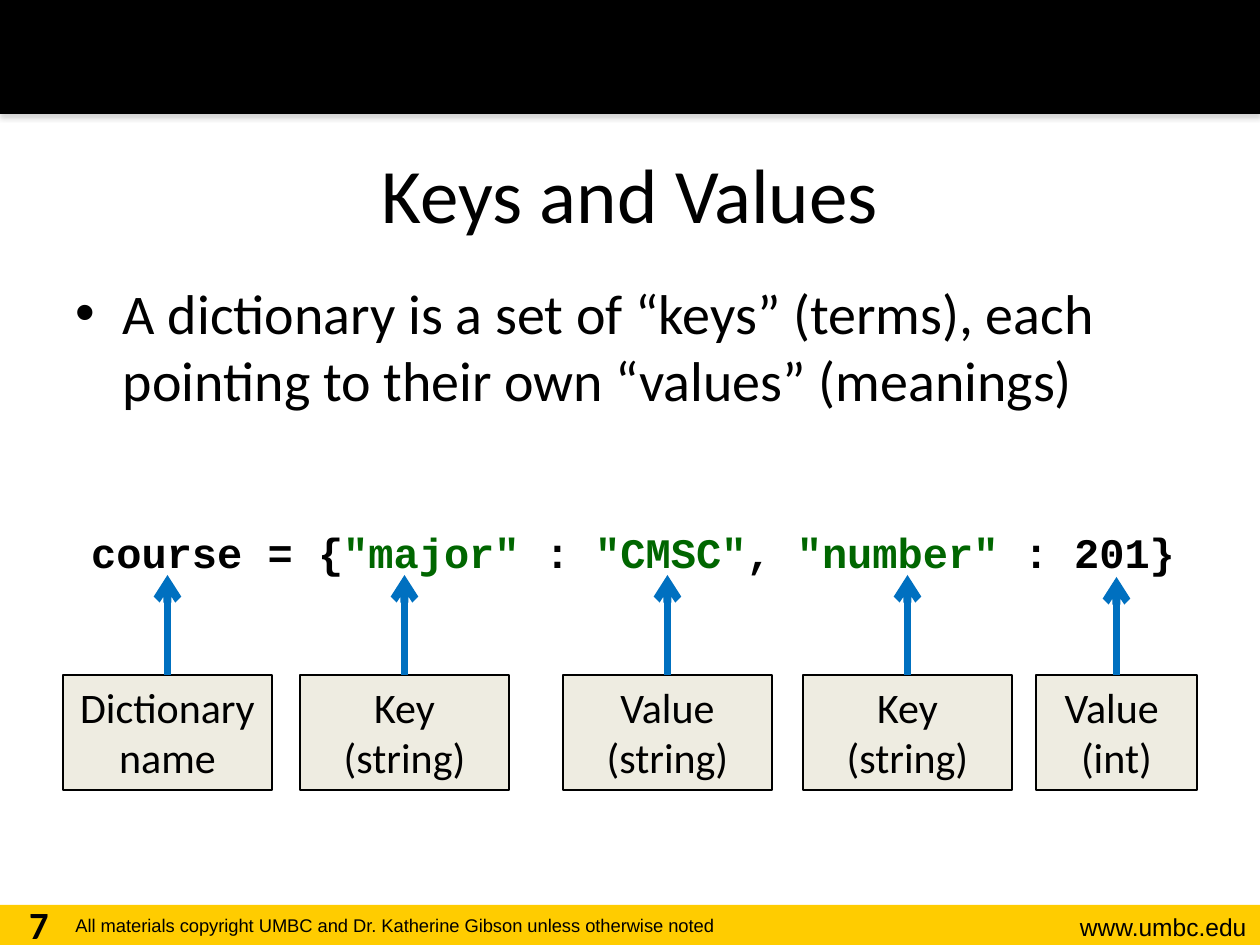
import lxml.etree
import pptx
import pptx.dml.color
import pptx.enum.shapes
import pptx.enum.text
import pptx.oxml
import pptx.oxml.ns
import pptx.util

EMU_PER_PX = 914400 / 126
COLORS = {
    "black": "000000",
    "gold": "FFCC00",
    "code_string": "006600",
    "label_fill": "EEECE1",
    "arrow": "0070C0",
    "shadow": "808080",
}
ALIGN = pptx.enum.text.PP_ALIGN
BANNER_SHADOW = (
    f'<a:effectLst {pptx.oxml.ns.nsdecls("a")}>'
    '<a:outerShdw blurRad="39370" dist="22860" dir="5400000" rotWithShape="0">'
    f'<a:srgbClr val="{COLORS["shadow"]}"><a:alpha val="35000"/></a:srgbClr>'
    "</a:outerShdw></a:effectLst>"
)
CODE_PARTS = [
    ("course = {", "black"),
    ('"major" ', "code_string"),
    (": ", "black"),
    ('"CMSC"', "code_string"),
    (", ", "black"),
    ('"number" ', "code_string"),
    (": 201}", "black"),
]
# Label text, left, width, top of its arrow
LABELS = [
    ("Dictionary name", 63, 209, 575),
    ("Key (string)", 300, 209, 575),
    ("Value (string)", 563, 209, 575),
    ("Key (string)", 803, 209, 575),
    ("Value \n(int)", 1036, 161, 577),
]
LABEL_TOP, LABEL_HEIGHT = 675, 115


def px(*lengths):
    """Turn pixel lengths into a list of EMU lengths."""
    return [pptx.util.Emu(round(length * EMU_PER_PX)) for length in lengths]


def rgb(color):
    return pptx.dml.color.RGBColor.from_string(COLORS[color])


def format_run(run, size, font="Calibri", color="black", bold=False):
    run.font.size = pptx.util.Pt(size)
    run.font.name = font
    run.font.bold = bold
    run.font.color.rgb = rgb(color)


def set_text(shape, text, size, align=ALIGN.LEFT, font="Calibri", bold=False):
    paragraph = shape.text_frame.paragraphs[0]
    paragraph.text = text
    paragraph.alignment = align
    for run in paragraph.runs:
        format_run(run, size, font, bold=bold)


def fill_placeholder(placeholder, box, text, size, align):
    placeholder.left, placeholder.top, placeholder.width, placeholder.height = px(*box)
    set_text(placeholder, text, size, align)


def add_text_box(slide, box):
    shape = slide.shapes.add_textbox(*px(*box))
    shape.text_frame.word_wrap = True
    return shape


def add_rectangle(slide, box, fill):
    shape = slide.shapes.add_shape(pptx.enum.shapes.MSO_SHAPE.RECTANGLE, *px(*box))
    shape.shadow.inherit = False
    shape.fill.solid()
    shape.fill.fore_color.rgb = rgb(fill)
    shape.line.fill.background()
    return shape


def add_banner(slide):
    banner = add_rectangle(slide, (0, 0, 1260, 114), "black")
    properties = banner.element.spPr
    properties.remove(properties.find(pptx.oxml.ns.qn("a:effectLst")))
    properties.append(pptx.oxml.parse_xml(BANNER_SHADOW))


def add_footer(slide):
    add_rectangle(slide, (0, 905, 1260, 40), "gold")
    address = add_text_box(slide, (1008, 906, 251, 42))
    set_text(address, "www.umbc.edu", 14, ALIGN.RIGHT, "Arial")
    credit = add_text_box(slide, (63, 908, 827, 37))
    set_text(
        credit,
        "All materials copyright UMBC and Dr. Katherine Gibson unless otherwise noted",
        10.5,
        font="Arial",
    )
    number = add_text_box(slide, (0, 895, 78, 50))
    set_text(number, "7", 22, ALIGN.CENTER, bold=True)


def add_code(slide):
    paragraph = add_text_box(slide, (35, 520, 1196, 63)).text_frame.paragraphs[0]
    paragraph.alignment = ALIGN.CENTER
    for text, color in CODE_PARTS:
        run = paragraph.add_run()
        run.text = text
        format_run(run, 24, "Courier New", color, bold=True)


def add_label(slide, text, left, width, arrow_top):
    """Add a label box with an arrow up to the code."""
    label = add_rectangle(slide, (left, LABEL_TOP, width, LABEL_HEIGHT), "label_fill")
    label.line.color.rgb = rgb("black")
    label.line.width = pptx.util.Pt(0.75)
    label.text_frame.word_wrap = True
    label.text_frame.vertical_anchor = pptx.enum.text.MSO_ANCHOR.TOP
    set_text(label, text, 24, ALIGN.CENTER)

    center = left + width / 2
    arrow = slide.shapes.add_connector(
        pptx.enum.shapes.MSO_CONNECTOR.STRAIGHT,
        *px(center, LABEL_TOP, center, arrow_top),
    )
    arrow.begin_connect(label, 0)
    arrow.line.color.rgb = rgb("arrow")
    arrow.line.width = pptx.util.Pt(4.5)
    line = arrow.line._get_or_add_ln()
    lxml.etree.SubElement(line, pptx.oxml.ns.qn("a:tailEnd"), type="arrow")
    lxml.etree.SubElement(arrow.element.spPr, pptx.oxml.ns.qn("a:effectLst"))


def main():
    presentation = pptx.Presentation()
    presentation.slide_width, presentation.slide_height = px(1260, 945)
    slide = presentation.slides.add_slide(presentation.slide_layouts[1])

    add_banner(slide)
    add_footer(slide)
    fill_placeholder(
        slide.shapes.title, (63, 114, 1134, 158), "Keys and Values", 44, ALIGN.CENTER
    )
    fill_placeholder(
        slide.placeholders[1],
        (63, 272, 1134, 622),
        "A dictionary is a set of “keys” (terms), each pointing to their own “values” (meanings)",
        32,
        ALIGN.LEFT,
    )
    add_code(slide)
    for label in LABELS:
        add_label(slide, *label)

    presentation.save("out.pptx")


if __name__ == "__main__":
    main()
